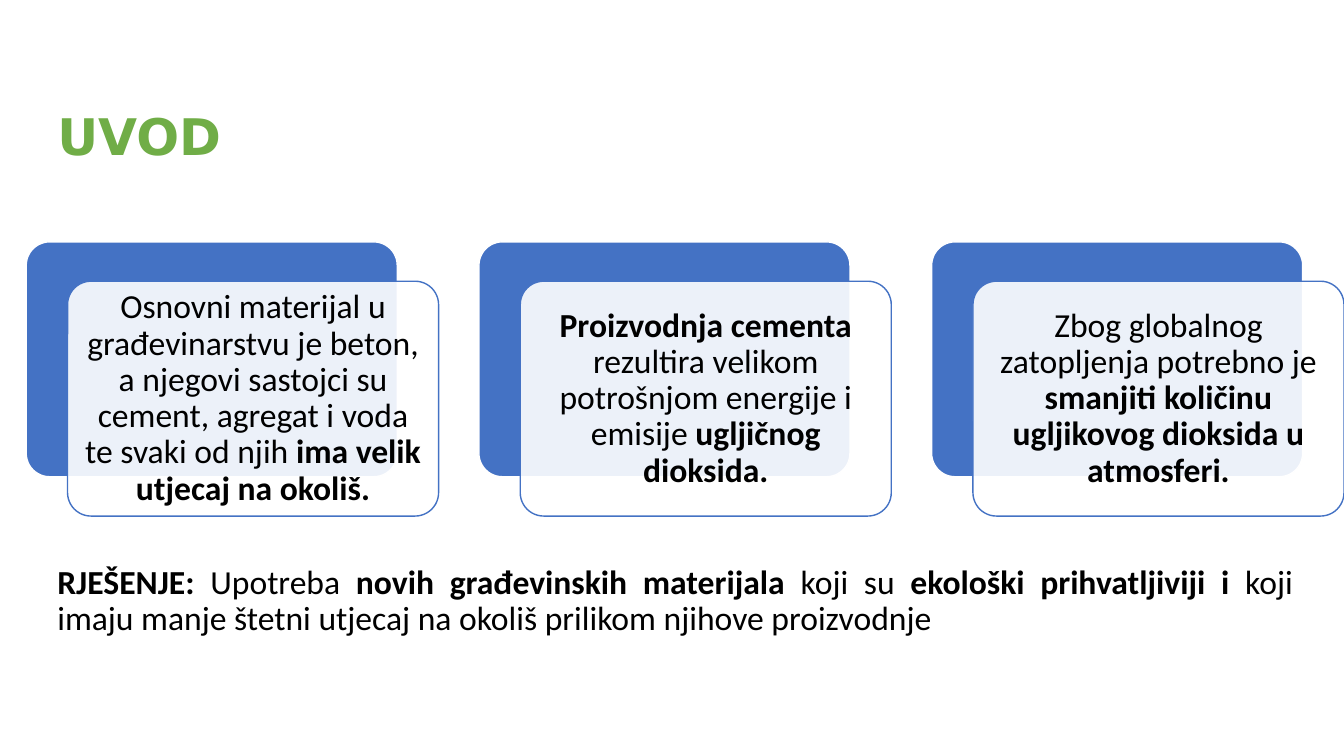
from lxml.etree import SubElement
from pptx import Presentation
from pptx.dml.color import RGBColor
from pptx.enum.shapes import MSO_SHAPE as Preset
from pptx.enum.text import MSO_ANCHOR as Anchor, PP_ALIGN as Align
from pptx.oxml.ns import qn
from pptx.util import Inches, Pt

THEME = {
    "title": RGBColor(0x70, 0xAD, 0x47),
    "accent": RGBColor(0x44, 0x72, 0xC4),
    "paper": RGBColor(0xFF, 0xFF, 0xFF),
    "ink": RGBColor(0, 0, 0),
    "title_font": "DejaVu Sans",
    "body_font": "Calibri",
    "title_size": Pt(36),
    "body_size": Pt(24),
    "outline": Pt(1),
}


def write(holder, text, align=Align.LEFT, anchor=Anchor.TOP, font="body_font",
          size="body_size", color="ink", before=0):
    """Fill one paragraph; parts between asterisks are bold."""
    frame = holder.text_frame
    frame.word_wrap = True
    frame.vertical_anchor = anchor
    paragraph = frame.paragraphs[0]
    paragraph.alignment = align
    paragraph.line_spacing = 0.9
    paragraph.space_before = Pt(before)
    for index, part in enumerate(text.split("*")):
        if part:
            run = paragraph.add_run()
            run.text = part
            run.font.bold = index % 2 == 1
            run.font.name = THEME[font]
            run.font.size = THEME[size]
            run.font.color.rgb = THEME[color]


def add_panel(left, top, fill, line):
    panel = slide.shapes.add_shape(Preset.ROUNDED_RECTANGLE, left, top,
                                   PANEL_WIDTH, PANEL_HEIGHT)
    panel.adjustments[0] = 0.1
    panel.shadow.inherit = False
    panel.fill.solid()
    panel.fill.fore_color.rgb = THEME[fill]
    panel.line.color.rgb = THEME[line]
    panel.line.width = THEME["outline"]
    return panel


deck = Presentation()
deck.slide_width, deck.slide_height = Inches(13.33), Inches(7.5)
slide = deck.slides.add_slide(deck.slide_layouts[6])

# Grid: three equal columns, each with a panel and a shifted card
TEXT_LEFT = Inches(0.47)
FIRST_COLUMN, COLUMN_PITCH = Inches(0.26), Inches(4.49)
ROW_TOP = Inches(2.4)
PANEL_WIDTH, PANEL_HEIGHT = Inches(3.68), Inches(2.33)
SHIFT_X, SHIFT_Y = Inches(0.41), Inches(0.39)

# Heading
heading = slide.shapes.add_textbox(TEXT_LEFT, Inches(0.66), Inches(8.93), Inches(1.44))
write(heading, "*UVOD*", anchor=Anchor.MIDDLE, font="title_font",
      size="title_size", color="title")

# Three statements
statements = [
    "Osnovni materijal u građevinarstvu je beton, a njegovi sastojci su cement, "
    "agregat i voda te svaki od njih *ima velik utjecaj na okoliš.*",
    "*Proizvodnja cementa *rezultira velikom potrošnjom energije i emisije "
    "*ugljičnog dioksida.*",
    "Zbog globalnog zatopljenja potrebno je *smanjiti količinu ugljikovog "
    "dioksida u atmosferi.*",
]
for column, statement in enumerate(statements):
    left = FIRST_COLUMN + column * COLUMN_PITCH
    add_panel(left, ROW_TOP, "accent", "paper")
    card = add_panel(left + SHIFT_X, ROW_TOP + SHIFT_Y, "paper", "accent")
    card_color = card.fill._xPr.find(qn("a:solidFill"))[0]
    SubElement(card_color, qn("a:alpha"), val="90000")
    frame = card.text_frame
    frame.margin_left = frame.margin_right = Inches(0.1)
    frame.margin_top = frame.margin_bottom = Inches(0.1)
    write(card, statement, align=Align.CENTER, anchor=Anchor.MIDDLE)

# Solution
solution = slide.shapes.add_textbox(TEXT_LEFT, Inches(5.56), Inches(12.45), Inches(0.83))
write(solution,
      "*RJEŠENJE: *Upotreba *novih građevinskih materijala *koji su "
      "*ekološki prihvatljiviji i *koji imaju manje štetni utjecaj na okoliš "
      "prilikom njihove proizvodnje",
      align=Align.JUSTIFY)

deck.save("out.pptx")
